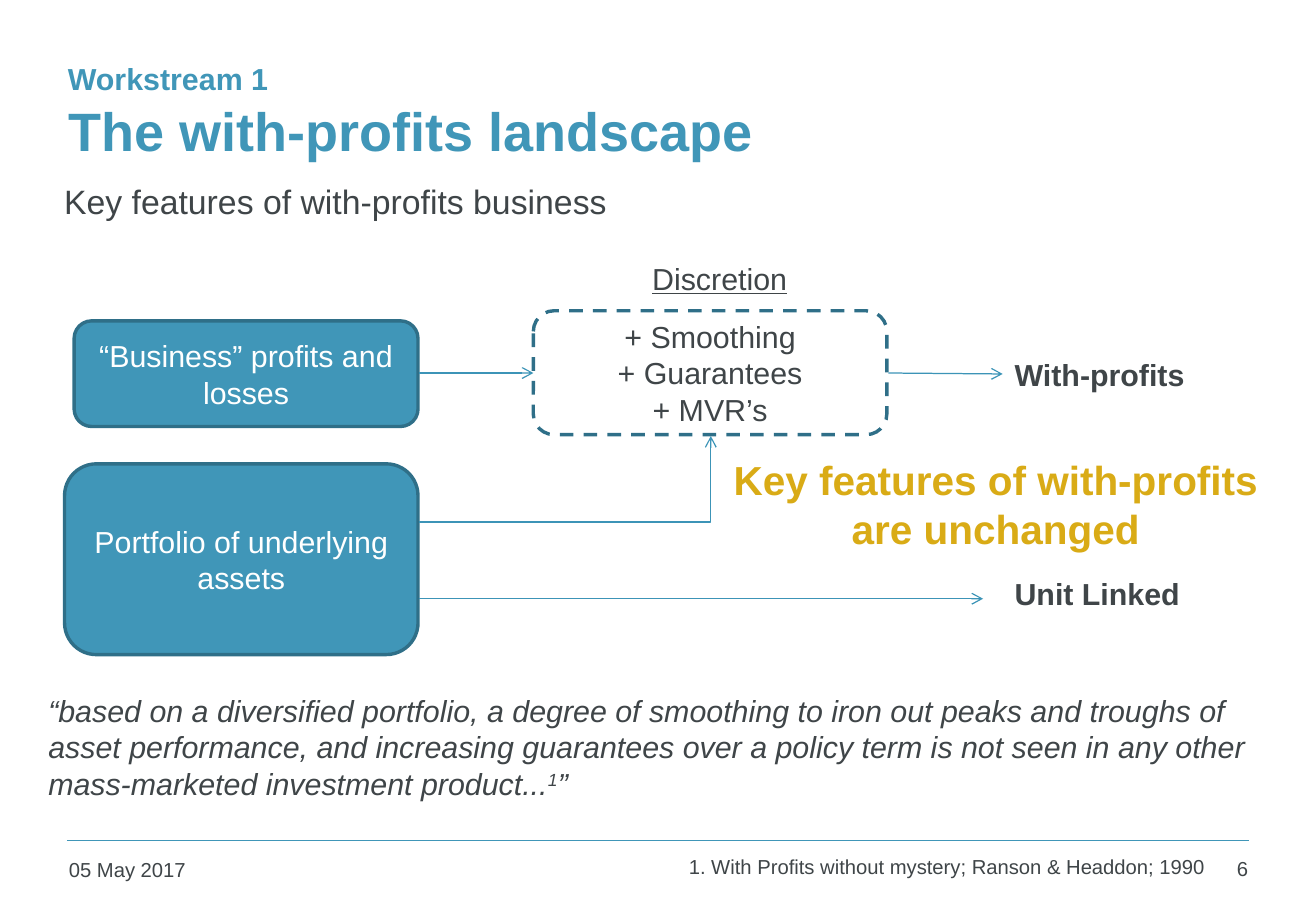
"""Build the slide on the with-profits landscape."""
from lxml import etree
from pptx import Presentation
from pptx.dml.color import RGBColor
from pptx.enum.dml import MSO_LINE
from pptx.enum.shapes import MSO_CONNECTOR, MSO_SHAPE
from pptx.enum.text import MSO_ANCHOR, PP_ALIGN
from pptx.oxml.ns import qn
from pptx.util import Cm, Pt

LEFT, MID, RIGHT = PP_ALIGN.LEFT, PP_ALIGN.CENTER, PP_ALIGN.RIGHT
TOP, CENTRE = MSO_ANCHOR.TOP, MSO_ANCHOR.MIDDLE
LINE, BENT = MSO_CONNECTOR.STRAIGHT, MSO_CONNECTOR.ELBOW
ROUND, DASH = MSO_SHAPE.ROUNDED_RECTANGLE, MSO_LINE.DASH
BLUE, DARK, GREY, GOLD, WHITE = "4096B8", "2F6F88", "3F4548", "D9AB16", "FFFFFF"
ARROW = "3C94B7"

deck = Presentation()
deck.slide_width, deck.slide_height = Cm(27.51), Cm(19.05)
slide = deck.slides.add_slide(deck.slide_layouts[6])
shapes = slide.shapes
hue = RGBColor.from_string


def write(shape, text, size, tint, align=LEFT, bold=False, anchor=TOP):
    frame = shape.text_frame
    frame.word_wrap = True
    frame.vertical_anchor = anchor
    frame.text = text
    for par in frame.paragraphs:
        par.alignment = align
        for run in par.runs:
            run.font.name = "Arial"
            run.font.size = Pt(size)
            run.font.bold = bold
            run.font.color.rgb = hue(tint)
    return frame.paragraphs[0]


def link(kind, x1, y1, x2, y2, tint, width):
    line = shapes.add_connector(kind, Cm(x1), Cm(y1), Cm(x2), Cm(y2))
    line.line.color.rgb = hue(tint)
    line.line.width = Pt(width)
    etree.SubElement(line._element.spPr, qn("a:effectLst"))
    return line


link(LINE, 1.4, 17.58, 26.11, 17.58, BLUE, 1)

texts = [
    ("The with-profits landscape", 1.19, 1.12, 24.94, 3.18, 32, BLUE, LEFT, True, CENTRE),
    ("Key features of with-profits business", 1.09, 3.66, 24.94, 1.1, 20, GREY, LEFT, False, TOP),
    ("05 May 2017", 1.19, 17.81, 6.07, 0.91, 12, GREY, LEFT, False, TOP),
    ("6", 24.38, 17.78, 1.96, 0.94, 12, GREY, RIGHT, False, TOP),
    ("Workstream 1", 1.17, 1.14, 4.85, 1.02, 18, BLUE, LEFT, True, TOP),
    ("Key features of with-profits\nare unchanged", 14.86, 9.4, 11.91, 2.21, 24, GOLD, MID, True, TOP),
    ("With-profits", 20.96, 7.32, 5, 1.02, 18, GREY, LEFT, True, TOP),
    ("Unit Linked", 20.96, 11.91, 5, 1.02, 18, GREY, LEFT, True, TOP),
    ("1. With Profits without mystery; Ranson & Headdon; 1990",
     14.15, 17.73, 11.5, 0.76, 12, GREY, LEFT, False, TOP),
]
for text, x, y, w, h, *style in texts:
    write(shapes.add_textbox(Cm(x), Cm(y), Cm(w), Cm(h)), text, *style)

label = shapes.add_textbox(Cm(11.35), Cm(5.31), Cm(7.39), Cm(1.02))
write(label, "Discretion", 18, GREY, MID).runs[0].font.underline = True

quote = shapes.add_textbox(Cm(0.76), Cm(14.35), Cm(26.01), Cm(2.57))
par = write(quote, "“based on a diversified portfolio, a degree of smoothing to iron out "
            "peaks and troughs of asset performance, and increasing guarantees over a "
            "policy term is not seen in any other mass-marketed investment product...", 18, GREY)
for mark in ("1", "”"):
    par.add_run().text = mark
for run in par.runs:
    run.font.name = "Arial"
    run.font.size = Pt(18)
    run.font.italic = True
    run.font.color.rgb = hue(GREY)
par.runs[1]._r.get_or_add_rPr().set("baseline", "30000")

boxes = [
    ("Portfolio of underlying assets", 1.35, 9.7, 7.39, 3.99, BLUE, WHITE),
    ("“Business” profits and losses", 1.55, 6.71, 7.19, 2.21, BLUE, WHITE),
    ("+ Smoothing\n+ Guarantees\n+ MVR’s", 11.15, 6.5, 7.39, 2.59, None, GREY),
]
for text, x, y, w, h, fill, tint in boxes:
    box = shapes.add_shape(ROUND, Cm(x), Cm(y), Cm(w), Cm(h))
    box.shadow.inherit = False
    box.line.color.rgb = hue(DARK)
    box.line.width = Pt(2)
    if fill:
        box.fill.solid()
        box.fill.fore_color.rgb = hue(fill)
    else:
        box.fill.background()
        box.line.dash_style = DASH
    write(box, text, 18, tint, MID, False, CENTRE)

arrows = [
    (LINE, 8.76, 12.52, 20.55, 12.52),
    (LINE, 8.76, 7.8, 11.15, 7.8),
    (BENT, 8.76, 10.92, 14.86, 9.12),
    (LINE, 18.57, 7.8, 20.96, 7.82),
]
for kind, *ends in arrows:
    line = link(kind, *ends, ARROW, 0.75)
    etree.SubElement(line.line._get_or_add_ln(), qn("a:tailEnd"), type="arrow")
    if kind == BENT:
        line._element.spPr.find(qn("a:prstGeom")).set("prst", "bentConnector2")

deck.save("out.pptx")
